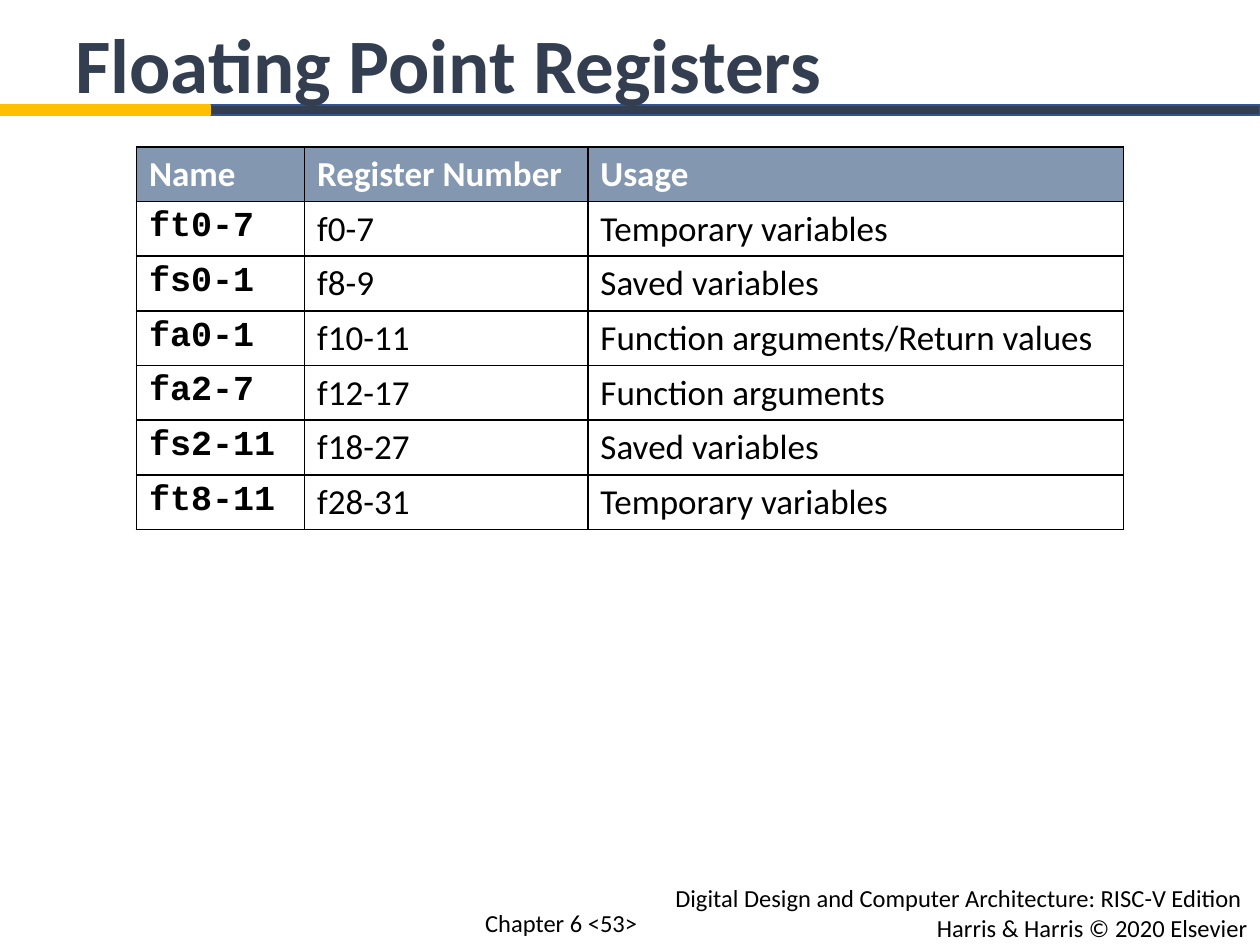
from lxml.etree import SubElement
from pptx import Presentation
from pptx.dml.color import RGBColor
from pptx.enum.shapes import MSO_SHAPE
from pptx.enum.text import PP_ALIGN
from pptx.oxml.ns import qn
from pptx.util import Cm, Pt


def color(hex_code):
    return RGBColor.from_string(hex_code)


def write(frame, text, size=14, font="Calibri", ink="000000", bold=False,
          align=PP_ALIGN.LEFT, margin=0, indent=0):
    """Fill a text frame, one paragraph per line of text."""
    frame.text = text
    for paragraph in frame.paragraphs:
        paragraph.alignment = align
        properties = paragraph._p.get_or_add_pPr()
        properties.set("marL", str(Cm(margin)))
        properties.set("indent", str(Cm(indent)))
        for run in paragraph.runs:
            run.font.size = Pt(size)
            run.font.name = font
            run.font.bold = bold
            run.font.color.rgb = color(ink)


class SlideBuilder:
    NAVY = "333F50"
    NAVY_EDGE = "325491"
    GOLD = "FFC000"
    HEADER = "8497B0"
    WHITE = "FFFFFF"
    BLACK = "000000"
    CODE_FONT = "Courier New"

    def __init__(self, slide):
        self.slide = slide

    def bar(self, left, top, width, height, fill, edge):
        bar = self.slide.shapes.add_shape(
            MSO_SHAPE.RECTANGLE, Cm(left), Cm(top), Cm(width), Cm(height))
        bar.shadow.inherit = False
        bar.fill.solid()
        bar.fill.fore_color.rgb = color(fill)
        bar.line.color.rgb = color(edge)
        bar.line.width = Pt(1)

    def label(self, left, top, width, height, text, **style):
        box = self.slide.shapes.add_textbox(Cm(left), Cm(top), Cm(width), Cm(height))
        box.text_frame.word_wrap = True
        write(box.text_frame, text, **style)

    def border(self, cell):
        properties = cell._tc.get_or_add_tcPr()
        for side in ("a:lnL", "a:lnR", "a:lnT", "a:lnB"):
            line = SubElement(properties, qn(side), w=str(Pt(1)))
            fill = SubElement(line, qn("a:solidFill"))
            SubElement(fill, qn("a:srgbClr"), val=self.BLACK)

    def table(self, left, top, widths, row_height, rows):
        table = self.slide.shapes.add_table(
            len(rows), len(widths), Cm(left), Cm(top),
            Cm(sum(widths)), Cm(row_height * len(rows))).table
        for column, width in zip(table.columns, widths):
            column.width = Cm(width)
        for r, row in enumerate(rows):
            table.rows[r].height = Cm(row_height)
            for c, text in enumerate(row):
                cell = table.cell(r, c)
                is_header = r == 0
                is_code = c == 0 and not is_header
                self.border(cell)
                if is_header:
                    cell.fill.solid()
                    cell.fill.fore_color.rgb = color(self.HEADER)
                else:
                    cell.fill.background()
                write(cell.text_frame, text, size=20,
                      font=self.CODE_FONT if is_code else "Calibri",
                      ink=self.WHITE if is_header else self.BLACK,
                      bold=is_header or is_code, margin=0.95, indent=-0.95)


def main():
    presentation = Presentation()
    presentation.slide_width, presentation.slide_height = Cm(25.4), Cm(19.05)
    builder = SlideBuilder(presentation.slides.add_slide(presentation.slide_layouts[6]))

    # Footer
    builder.bar(0, 16.31, 25.4, 2.74, builder.WHITE, builder.WHITE)
    builder.label(9.53, 17.68, 15.87, 1.45,
                  "Digital Design and Computer Architecture: RISC-V Edition \n"
                  "Harris & Harris © 2020 Elsevier", align=PP_ALIGN.RIGHT)
    builder.label(9.53, 18.19, 4.01, 0.86, "Chapter 6 <53>")

    # Title with its two-colour rule
    accent = 4.24
    builder.bar(accent, 2.12, 25.4 - accent, 0.2, builder.NAVY, builder.NAVY_EDGE)
    builder.bar(0, 2.12, accent, 0.2, builder.GOLD, builder.GOLD)
    builder.label(0, 0.2, 22.02, 2.13, "Floating Point Registers",
                  size=44, ink=builder.NAVY, bold=True, margin=1.27)

    # Register table
    builder.table(2.75, 2.96, (3.39, 5.71, 10.8), 1.1, [
        ("Name", "Register Number", "Usage"),
        ("ft0-7", "f0-7", "Temporary variables"),
        ("fs0-1", "f8-9", "Saved variables"),
        ("fa0-1", "f10-11", "Function arguments/Return values"),
        ("fa2-7", "f12-17", "Function arguments"),
        ("fs2-11", "f18-27", "Saved variables"),
        ("ft8-11", "f28-31", "Temporary variables"),
    ])

    presentation.save("out.pptx")


if __name__ == "__main__":
    main()
